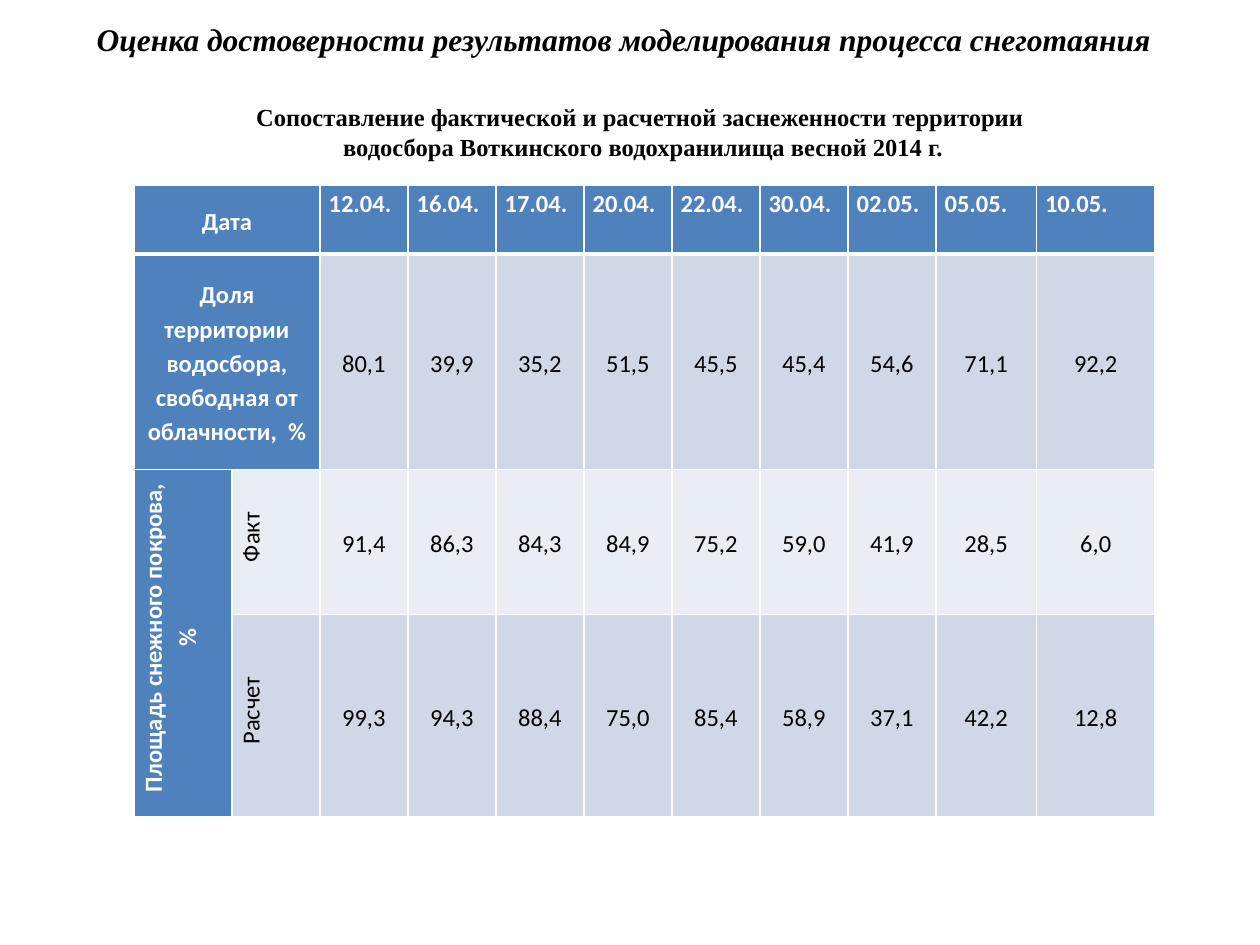
from lxml import etree
from pptx import Presentation
from pptx.dml.color import RGBColor
from pptx.enum import text as t
from pptx.oxml import ns
from pptx.util import Pt

COLORS = {"black": "000000", "white": "FFFFFF", "head": "4F81BD",
          "dark_band": "D0D8E8", "light_band": "E9EDF4"}

DATES = ["12.04.", "16.04.", "17.04.", "20.04.", "22.04.",
         "30.04.", "02.05.", "05.05.", "10.05."]
CLOUD_FREE = ["80,1", "39,9", "35,2", "51,5", "45,5", "45,4", "54,6", "71,1", "92,2"]
ACTUAL = ["91,4", "86,3", "84,3", "84,9", "75,2", "59,0", "41,9", "28,5", "6,0"]
COMPUTED = ["99,3", "94,3", "88,4", "75,0", "85,4", "58,9", "37,1", "42,2", "12,8"]

# Row contents; None marks a cell covered by a merged neighbour
ROWS = [
    ["Дата", None] + DATES,
    ["Доля территории водосбора, свободная от облачности,  %", None] + CLOUD_FREE,
    ["Площадь снежного покрова, %", "Факт"] + ACTUAL,
    [None, "Расчет"] + COMPUTED,
]
BANDS = ["head", "dark_band", "light_band", "dark_band"]
COLUMN_WIDTHS = [55.9] + [50.3] * 8 + [57.4, 68]
ROW_HEIGHTS = [39.4, 123.1, 83, 115.2]


def write(frame, lines, font="Calibri", size=14, color="black", bold=False,
          italic=False, align=t.PP_ALIGN.CENTER, spacing=None):
    """Write one paragraph per line in a single format."""
    for number, line in enumerate(lines):
        paragraph = frame.paragraphs[0] if number == 0 else frame.add_paragraph()
        paragraph.alignment = align
        if spacing:
            paragraph.line_spacing = spacing
        run = paragraph.add_run()
        run.text = line
        run.font.name = font
        run.font.size = Pt(size)
        run.font.bold = bold
        run.font.italic = italic
        run.font.color.rgb = RGBColor.from_string(COLORS[color])


def add_heading(slide, box, lines, anchor=t.MSO_ANCHOR.TOP, **text_format):
    frame = slide.shapes.add_textbox(*map(Pt, box)).text_frame
    frame.word_wrap = False
    frame.auto_size = t.MSO_AUTO_SIZE.SHAPE_TO_FIT_TEXT
    frame.vertical_anchor = anchor
    write(frame, lines, font="Times New Roman", bold=True, **text_format)


def add_borders(cell, top, bottom):
    properties = cell._tc.get_or_add_tcPr()
    for side, width in (("L", 1), ("R", 1), ("T", top), ("B", bottom)):
        line = etree.SubElement(properties, ns.qn(f"a:ln{side}"), w=str(Pt(width)))
        fill = etree.SubElement(line, ns.qn("a:solidFill"))
        etree.SubElement(fill, ns.qn("a:srgbClr"), val=COLORS["white"])


def format_cell(cell, row, column, content):
    is_head = row == 0 or column == 0
    # The thick rule lies between the date row and the data
    add_borders(cell, top=3 if row == 1 else 1, bottom=3 if row == 0 else 1)
    cell.fill.solid()
    cell.fill.fore_color.rgb = RGBColor.from_string(
        COLORS["head" if is_head else BANDS[row]])
    if content is None:
        return

    cell.margin_left = cell.margin_right = Pt(5)
    cell.margin_top = cell.margin_bottom = 0
    is_date = row == 0 and column > 0
    cell.vertical_anchor = t.MSO_ANCHOR.TOP if is_date else t.MSO_ANCHOR.MIDDLE
    write(cell.text_frame, [content], color="white" if is_head else "black",
          bold=is_head, spacing=1.15,
          align=t.PP_ALIGN.LEFT if is_date else t.PP_ALIGN.CENTER)

    # Labels of the snow cover rows read upwards
    if row >= 2 and column < 2:
        cell._tc.get_or_add_tcPr().set("vert", "vert270")
        paragraph = cell.text_frame.paragraphs[0]
        paragraph._p.get_or_add_pPr().set("marL", str(Pt(5.65)))


def add_snow_table(slide, left, top):
    table = slide.shapes.add_table(
        len(ROWS), len(COLUMN_WIDTHS), Pt(left), Pt(top),
        Pt(sum(COLUMN_WIDTHS)), Pt(sum(ROW_HEIGHTS))).table
    for column, width in zip(table.columns, COLUMN_WIDTHS):
        column.width = Pt(width)
    for table_row, height in zip(table.rows, ROW_HEIGHTS):
        table_row.height = Pt(height)

    for row, contents in enumerate(ROWS):
        for column, content in enumerate(contents):
            format_cell(table.cell(row, column), row, column, content)

    # Merged labels
    for first, last in (((0, 0), (0, 1)), ((1, 0), (1, 1)), ((2, 0), (3, 0))):
        table.cell(*first).merge(table.cell(*last))


def main():
    deck = Presentation()
    deck.slide_width, deck.slide_height = Pt(720), Pt(540)
    slide = deck.slides.add_slide(deck.slide_layouts[6])

    # Title
    add_heading(slide, (48.2, 7.9, 638.6, 28.8),
                ["Оценка достоверности результатов моделирования процесса снеготаяния"],
                size=18, italic=True, align=t.PP_ALIGN.LEFT)
    # Table of actual and computed snow cover
    add_snow_table(slide, 76.6, 105.8)
    # Table caption
    add_heading(slide, (136.8, 54.7, 461.5, 41),
                ["Сопоставление фактической и расчетной заснеженности территории ",
                 "водосбора Воткинского водохранилища весной 2014 г."],
                anchor=t.MSO_ANCHOR.MIDDLE)

    deck.save("out.pptx")


if __name__ == "__main__":
    main()
